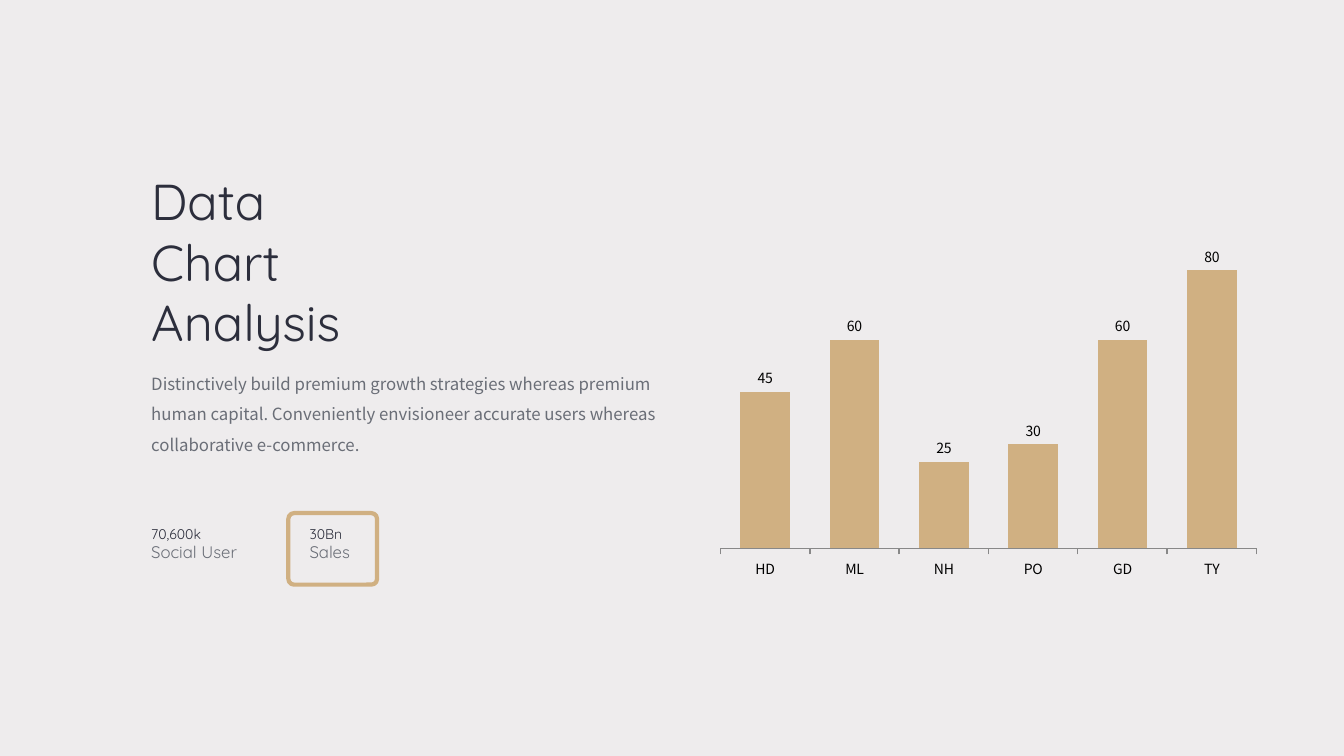
import lxml.etree
import pptx
import pptx.chart.data
import pptx.dml.color
import pptx.enum.chart
import pptx.enum.shapes
import pptx.enum.text
import pptx.oxml.ns
import pptx.util

Inches = pptx.util.Inches
Pt = pptx.util.Pt
SANS = "Noto Sans CJK SC"
ROUND = "Quicksand"
DARK, GREY, GOLD = "2C2E3C", "6A6E77", "D0B082"


def color(code):
    return pptx.dml.color.RGBColor.from_string(code)


def style(font, name, size, code):
    font.name = name
    font.size = Pt(size)
    font.color.rgb = color(code)


def place(shape, left, top, width, height):
    shape.left, shape.top = Inches(left), Inches(top)
    shape.width, shape.height = Inches(width), Inches(height)


def write(shape, text, looks, space=1.0, wrap=True):
    frame = shape.text_frame
    frame.text = text
    frame.word_wrap = wrap
    frame.auto_size = pptx.enum.text.MSO_AUTO_SIZE.NONE
    frame.vertical_anchor = pptx.enum.text.MSO_ANCHOR.TOP
    frame.margin_left = frame.margin_right = 0
    frame.margin_top = frame.margin_bottom = 0
    for para, look in zip(frame.paragraphs, looks):
        para.alignment = pptx.enum.text.PP_ALIGN.LEFT
        para.line_spacing = space
        para.space_before = Pt(0)
        for run in para.runs:
            style(run.font, *look)


def add_intro(slide, left, top):
    title, body = slide.shapes.title, slide.placeholders[1]
    place(title, left, top, 2.1, 1.82)
    write(title, "Data Chart\nAnalysis", [(ROUND, 36, DARK)] * 2)
    place(body, left, top + 1.92, 5.2, 0.91)
    write(
        body,
        "Distinctively build premium growth strategies whereas premium\n"
        "human capital. Conveniently envisioneer accurate users whereas\n"
        "collaborative e-commerce.",
        [(SANS, 12, GREY)] * 3,
        1.5,
    )
    for para in body.text_frame.paragraphs:
        props = para._p.get_or_add_pPr()
        props.set("marL", "0")
        props.set("indent", "0")
        lxml.etree.SubElement(props, pptx.oxml.ns.qn("a:buNone"))


def add_fact(shapes, left, top, width, value, label):
    box = shapes.add_textbox(
        Inches(left), Inches(top), Inches(width), Inches(0.37))
    looks = [(ROUND, 10, DARK), (ROUND, 12, GREY)]
    write(box, f"{value}\n{label}", looks, wrap=False)


def add_facts(slide, left, top):
    add_fact(slide.shapes, left, top, 0.93, "70,600k", "Social User")
    group = slide.shapes.add_group_shape()
    add_fact(group.shapes, left + 1.57, top, 0.42, "30Bn", "Sales")
    frame = group.shapes.add_shape(
        pptx.enum.shapes.MSO_SHAPE.ROUNDED_RECTANGLE,
        Inches(left + 1.36), Inches(top - 0.12), Inches(0.88), Inches(0.71))
    frame.adjustments[0] = 0.08
    frame.shadow.inherit = False
    frame.fill.background()
    frame.line.color.rgb = color(GOLD)
    frame.line.width = Pt(3)


def set_plot(chart, x, y, w, h):
    qn = pptx.oxml.ns.qn
    area = chart._chartSpace.find(".//" + qn("c:plotArea"))
    old = area.find(qn("c:layout"))
    if old is not None:
        area.remove(old)
    layout = lxml.etree.Element(qn("c:layout"))
    manual = lxml.etree.SubElement(layout, qn("c:manualLayout"))
    parts = {"layoutTarget": "inner", "xMode": "edge", "yMode": "edge",
             "x": x, "y": y, "w": w, "h": h}
    for name, value in parts.items():
        lxml.etree.SubElement(manual, qn("c:" + name)).set("val", str(value))
    area.insert(0, layout)


def add_bars(slide, left, top, width, height):
    kinds = pptx.enum.chart
    data = pptx.chart.data.CategoryChartData(number_format="0")
    data.categories = ["HD", "ML", "NH", "PO", "GD", "TY"]
    data.add_series("Series 1", [45, 60, 25, 30, 60, 80])
    chart = slide.shapes.add_chart(
        kinds.XL_CHART_TYPE.COLUMN_CLUSTERED, Inches(left), Inches(top),
        Inches(width), Inches(height), data).chart
    style(chart.font, SANS, 10, "000000")
    chart.has_title = chart.has_legend = False
    set_plot(chart, 0.014, 0.051, 0.981, 0.862)

    across = chart.category_axis
    across.tick_label_position = kinds.XL_TICK_LABEL_POSITION.LOW
    across.major_tick_mark = kinds.XL_TICK_MARK.OUTSIDE
    across.format.line.color.rgb = color("888888")
    across.format.line.width = Pt(1)

    scale = chart.value_axis
    scale.has_major_gridlines = False
    scale.minimum_scale, scale.maximum_scale = 0, 100
    scale.major_unit = 20
    scale.tick_label_position = kinds.XL_TICK_LABEL_POSITION.NONE
    scale.major_tick_mark = kinds.XL_TICK_MARK.NONE
    scale.format.line.fill.background()

    plot = chart.plots[0]
    plot.vary_by_categories = False
    plot.gap_width, plot.overlap = 80, -27
    bars = plot.series[0]
    bars.format.fill.solid()
    bars.format.fill.fore_color.rgb = color(GOLD)
    labels = bars.data_labels
    labels.show_value = True
    labels.position = kinds.XL_LABEL_POSITION.OUTSIDE_END
    labels.number_format = "0"
    labels.number_format_is_linked = False
    style(labels.font, SANS, 10, "000000")


def main():
    deck = pptx.Presentation()
    deck.slide_width, deck.slide_height = Inches(13.33), Inches(7.5)
    slide = deck.slides.add_slide(deck.slide_layouts[1])
    slide.background.fill.solid()
    slide.background.fill.fore_color.rgb = color("EEECED")
    add_bars(slide, 7.07, 1.79, 5.42, 4)
    add_intro(slide, 1.5, 1.69)
    add_facts(slide, 1.5, 5.21)
    deck.save("out.pptx")


if __name__ == "__main__":
    main()
